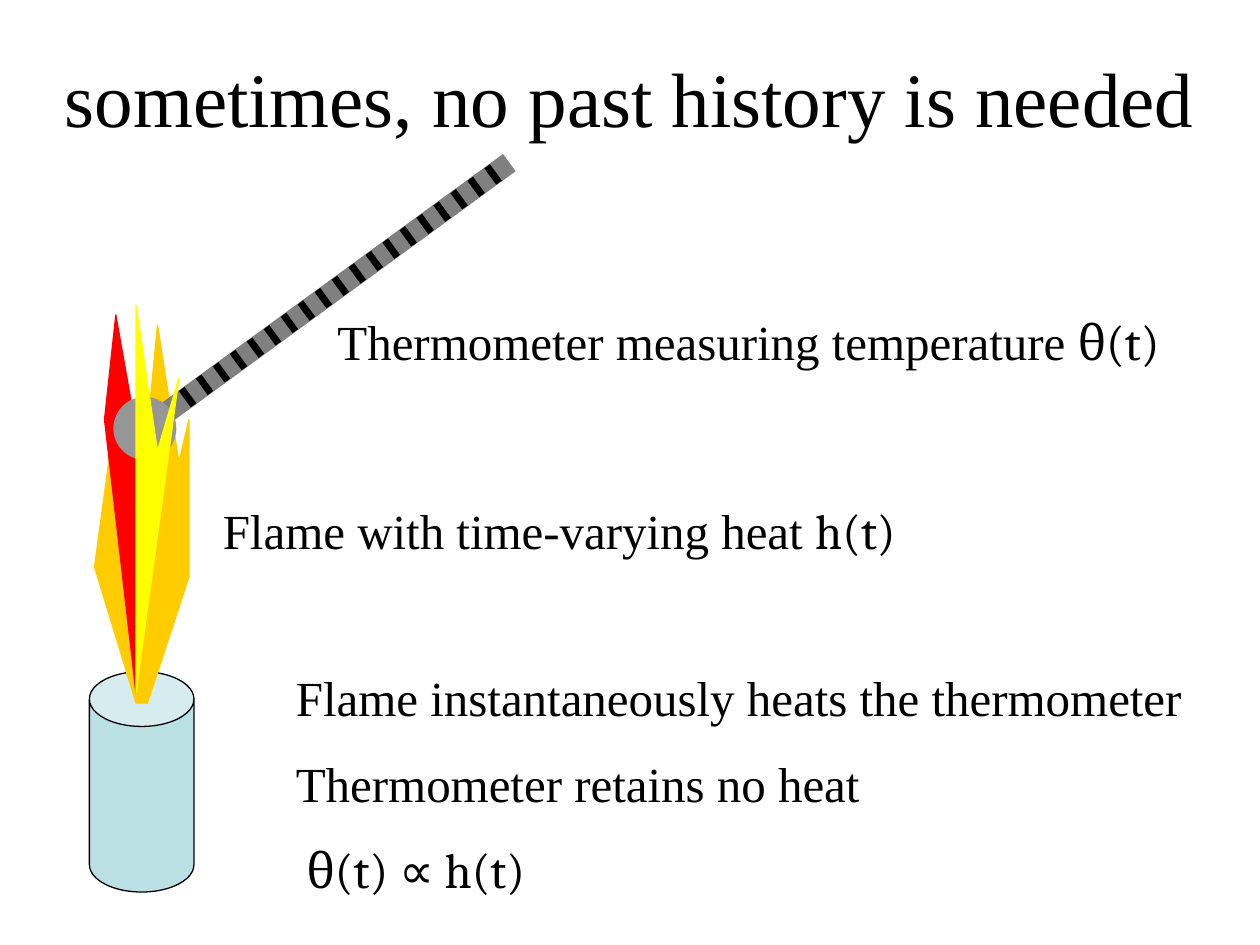
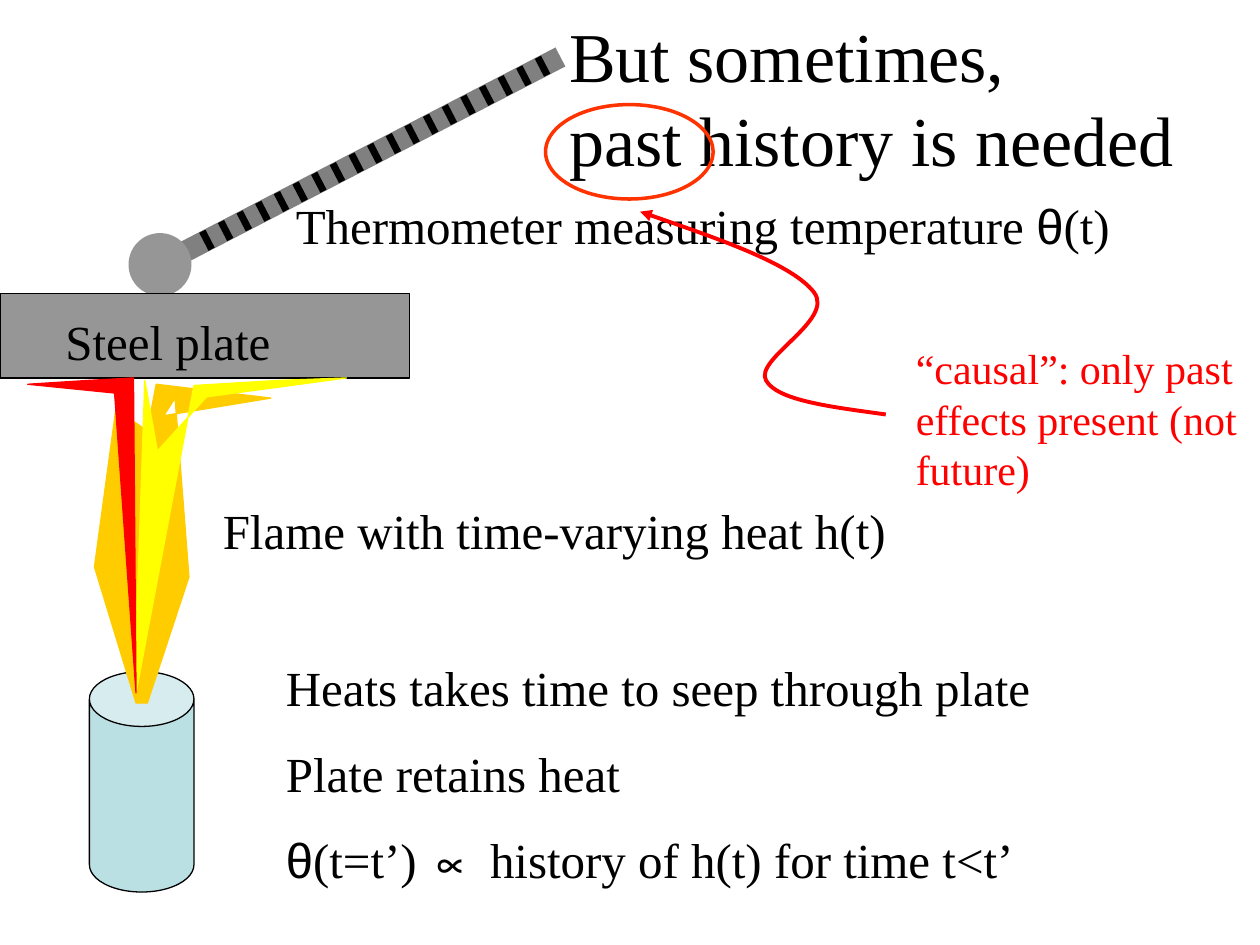
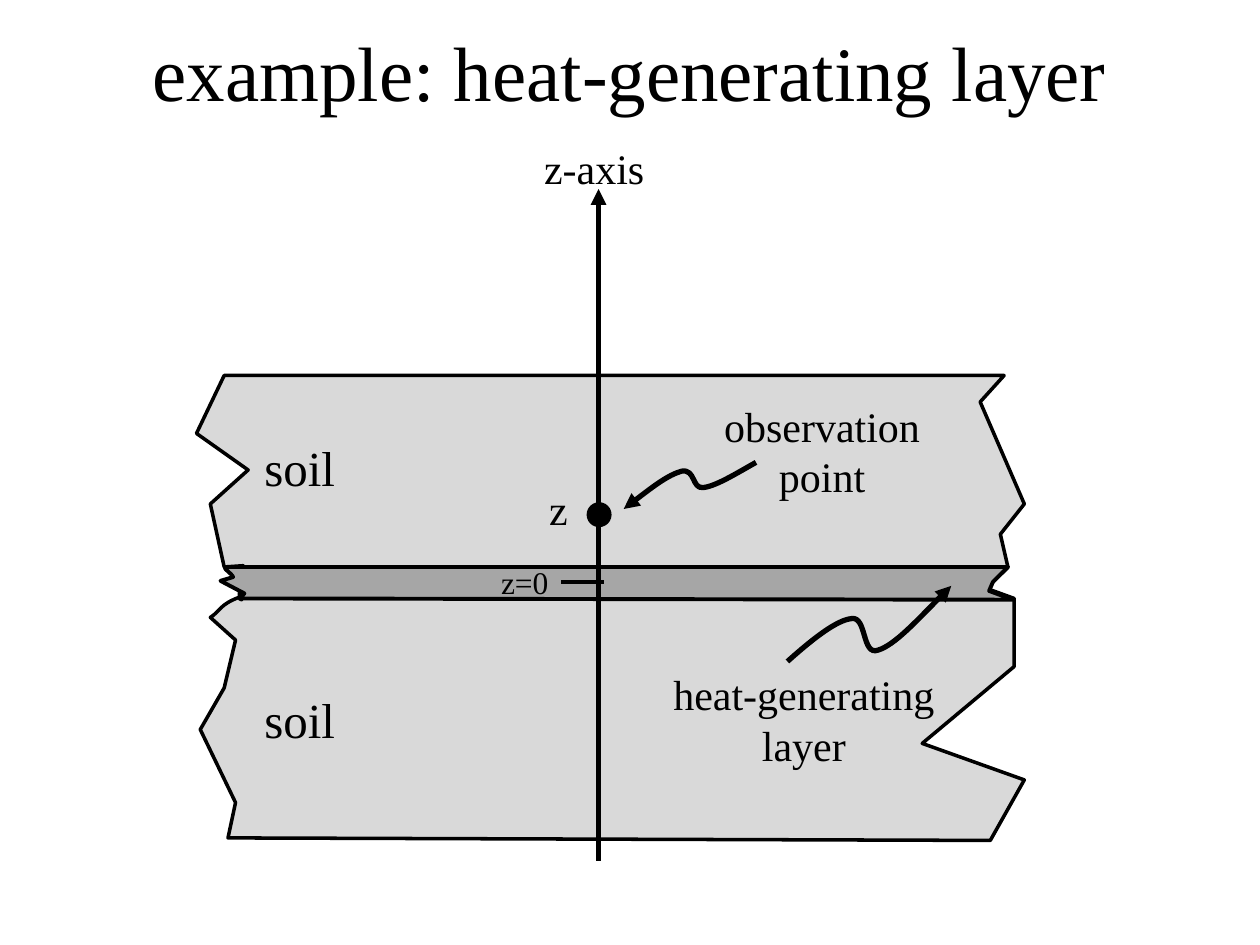
from itertools import islice
from math import cos, radians, sin
from typing import NamedTuple, Optional

from lxml.etree import Element, SubElement
from pptx import Presentation
from pptx.dml.color import RGBColor
from pptx.enum.shapes import MSO_CONNECTOR, MSO_SHAPE
from pptx.enum.text import MSO_ANCHOR, PP_ALIGN
from pptx.oxml.ns import qn
from pptx.util import Inches, Pt

BLACK = RGBColor(0x00, 0x00, 0x00)
RED = RGBColor(0xFF, 0x00, 0x00)
ORANGE = RGBColor(0xFF, 0xCC, 0x00)
YELLOW = RGBColor(0xFF, 0xFF, 0x00)
RING_RED = RGBColor(0xFF, 0x33, 0x00)
ROD_GREY = RGBColor(0x80, 0x80, 0x80)
STEEL = RGBColor(0x96, 0x96, 0x96)
BURNER_BLUE = RGBColor(0xBB, 0xE0, 0xE3)
SOIL_GREY = RGBColor(0xD9, 0xD9, 0xD9)
LAYER_GREY = RGBColor(0xA6, 0xA6, 0xA6)

SERIF = "Times New Roman"
MATH = "Cambria"
GREEK = "Arial"


class Box(NamedTuple):
    left: float
    top: float
    width: float
    height: float


class Span(NamedTuple):
    text: str
    font: str = SERIF


class Label(NamedTuple):
    """A text box; each line is a tuple of spans."""
    box: Box
    lines: tuple
    size: float = 28
    color: RGBColor = BLACK
    align: PP_ALIGN = PP_ALIGN.LEFT
    anchor: MSO_ANCHOR = MSO_ANCHOR.TOP


class Outline(NamedTuple):
    """A start point, then (x, y) for each line and six numbers for each Bézier curve."""
    start: tuple
    segments: tuple
    fill: Optional[RGBColor] = None
    line: RGBColor = BLACK
    line_width: float = 0.75
    arrow: bool = False


class Thermometer(NamedTuple):
    """Lies along a line rising by angle (degrees) from the centre of its bulb."""
    bulb_x: float
    bulb_y: float
    angle: float


def plain(text: str) -> tuple:
    return (Span(text),)


def place(box: Box) -> list:
    return [Inches(length) for length in box]


def paint(shape, fill: Optional[RGBColor], line: Optional[RGBColor], line_width: float = 0.75) -> None:
    shape.shadow.inherit = False
    if fill is None:
        shape.fill.background()
    else:
        shape.fill.solid()
        shape.fill.fore_color.rgb = fill
    if line is None:
        shape.line.fill.background()
    else:
        shape.line.color.rgb = line
        shape.line.width = Pt(line_width)


def add_arrowhead(shape) -> None:
    SubElement(shape.element.spPr.find(qn("a:ln")), qn("a:tailEnd"), type="triangle")


def add_preset(shapes, kind: MSO_SHAPE, box: Box, fill: Optional[RGBColor],
               line: Optional[RGBColor] = None, line_width: float = 0.75):
    shape = shapes.add_shape(kind, *place(box))
    paint(shape, fill, line, line_width)
    return shape


def add_line(shapes, start: tuple, end: tuple, width: float):
    points = [Inches(value) for value in (*start, *end)]
    connector = shapes.add_connector(MSO_CONNECTOR.STRAIGHT, *points)
    connector.line.color.rgb = BLACK
    connector.line.width = Pt(width)
    SubElement(connector.element.spPr, qn("a:effectLst"))
    return connector


def add_outline(shapes, outline: Outline):
    """Draw straight segments, then merge each triple of curve points into one Bézier."""
    builder = shapes.build_freeform(*(Inches(value) for value in outline.start))
    points = [(Inches(segment[i]), Inches(segment[i + 1]))
              for segment in outline.segments for i in range(0, len(segment), 2)]
    builder.add_line_segments(points, close=outline.fill is not None)
    shape = builder.convert_to_shape()
    paint(shape, outline.fill, outline.line, outline.line_width)

    drawing = shape.element.find(".//" + qn("a:path"))
    steps = iter(drawing.findall(qn("a:lnTo")))
    for segment in outline.segments:
        group = list(islice(steps, len(segment) // 2))
        if len(group) == 3:
            curve = Element(qn("a:cubicBezTo"))
            group[0].addprevious(curve)
            for step in group:
                curve.append(step[0])
                drawing.remove(step)
    if outline.arrow:
        add_arrowhead(shape)


def add_label(shapes, label: Label) -> None:
    frame = shapes.add_textbox(*place(label.box)).text_frame
    frame.word_wrap = True
    frame.vertical_anchor = label.anchor
    for number, spans in enumerate(label.lines):
        paragraph = frame.add_paragraph() if number else frame.paragraphs[0]
        paragraph.alignment = label.align
        if number:
            paragraph.space_before = Pt(15.5)
        for span in spans:
            paragraph.text += ""
            break
        for span in spans:
            run = paragraph.add_run()
            run.text = span.text
            run.font.name = span.font
            run.font.size = Pt(label.size)
            run.font.color.rgb = label.color


def add_title(shapes, text: str, box: Box, size: float = 44,
              align: PP_ALIGN = PP_ALIGN.CENTER) -> None:
    """Add a title; a vertical tab in the text breaks the line."""
    frame = shapes.add_textbox(*place(box)).text_frame
    frame.word_wrap = True
    frame.vertical_anchor = MSO_ANCHOR.MIDDLE
    paragraph = frame.paragraphs[0]
    paragraph.text = text
    paragraph.alignment = align
    for run in paragraph.runs:
        run.font.name = SERIF
        run.font.size = Pt(size)
        run.font.color.rgb = BLACK


def add_burner(shapes) -> None:
    burner = add_preset(shapes, MSO_SHAPE.CAN, Box(0.71, 5.33, 0.83, 1.75), BURNER_BLUE, BLACK)
    burner.adjustments[0] = 0.525


def add_thermometer(shapes, thermometer: Thermometer) -> None:
    length, thickness, bulb = 3.58, 0.17, 0.5
    first_mark, mark_count, marks_per_inch, half_mark = 0.42, 19, 6, 0.08
    across, up = cos(radians(thermometer.angle)), sin(radians(thermometer.angle))
    parts = shapes.add_group_shape().shapes

    def along(distance: float) -> tuple:
        return thermometer.bulb_x + distance * across, thermometer.bulb_y - distance * up

    for kind, distance, width, height, color in (
            (MSO_SHAPE.RECTANGLE, length / 2, length, thickness, ROD_GREY),
            (MSO_SHAPE.OVAL, 0, bulb, bulb, STEEL)):
        x, y = along(distance)
        part = add_preset(parts, kind, Box(x - width / 2, y - height / 2, width, height), color)
        part.rotation = -thermometer.angle

    for number in range(mark_count):
        x, y = along(first_mark + number / marks_per_inch)
        dx, dy = half_mark * up, half_mark * across
        add_line(parts, (x - dx, y - dy), (x + dx, y + dy), 4)


def flame(color: RGBColor, start: tuple, *segments: tuple) -> Outline:
    return Outline(start, segments, color, color)


def build_instant_heating(shapes) -> None:
    add_burner(shapes)
    add_title(shapes, "sometimes, no past history is needed", Box(0, 0.25, 10, 1.03))
    add_outline(shapes, flame(ORANGE, (1.08, 5.58), (0.75, 4.5), (0.92, 3.25), (1.17, 3.42),
                              (1.25, 2.58), (1.42, 3.67), (1.5, 3.33), (1.5, 4.58), (1.17, 5.58)))
    add_outline(shapes, flame(RED, (1.17, 3.92), (0.92, 2.5), (0.83, 3.33), (1.08, 5.5),
                              (1.17, 3.83)))
    add_thermometer(shapes, Thermometer(1.15, 3.4, 36.1))
    add_outline(shapes, flame(YELLOW, (1.08, 5.08), (1.08, 2.42), (1.25, 3.58), (1.42, 3),
                              (1.08, 5.5), (1.08, 5)))
    for label in (
            Label(Box(1.67, 3.92, 6.17, 0.57),
                  ((Span("Flame with time-varying heat "), Span("h(t)", MATH)),)),
            Label(Box(2.58, 2.42, 7.42, 0.57),
                  ((Span("Thermometer measuring temperature "), Span("θ(t)", MATH)),)),
            Label(Box(2.25, 5.25, 7.58, 1.97),
                  (plain("Flame instantaneously heats the thermometer"),
                   plain("Thermometer retains no heat"),
                   (Span(" θ(t) ∝ h(t)", MATH),)))):
        add_label(shapes, label)


def build_delayed_heating(shapes) -> None:
    add_burner(shapes)
    add_title(shapes, "But sometimes,\vpast history is needed", Box(4.42, 0.25, 5.33, 1.03),
              40, PP_ALIGN.LEFT)
    add_outline(shapes, flame(ORANGE, (1.08, 5.58), (0.75, 4.5), (0.92, 3.25), (1.17, 3.42),
                              (1.24, 3.05), (2.15, 3.16), (1.3, 3.3), (1.39, 3.16),
                              (1.5, 4.58), (1.17, 5.58)))
    add_thermometer(shapes, Thermometer(1.27, 2.1, 27.4))
    for label in (
            Label(Box(1.67, 3.92, 6.17, 0.57), (plain("Flame with time-varying heat h(t)"),)),
            Label(Box(2.25, 1.5, 7.17, 0.57),
                  ((Span("Thermometer measuring temperature "), Span("θ", GREEK), Span("(t)")),)),
            Label(Box(2.17, 5.17, 7.58, 1.97),
                  (plain("Heats takes time to seep through plate"),
                   plain("Plate retains heat"),
                   (Span("θ", GREEK), Span("(t=t’) ∝ history of h(t) for time t<t’"))))):
        add_label(shapes, label)
    add_preset(shapes, MSO_SHAPE.RECTANGLE, Box(0, 2.33, 3.25, 0.67), STEEL, BLACK)
    add_outline(shapes, flame(YELLOW, (1.08, 5.08), (1.15, 3.02), (1.25, 3.58), (1.64, 3.15),
                              (2.75, 3), (2.21, 3.02), (1.54, 3.06), (1.08, 5.5), (1.08, 5)))
    add_outline(shapes, flame(RED, (0.7, 3.02), (0.22, 3.05), (0.91, 3.12), (1.08, 5.5),
                              (1.06, 3)))
    add_label(shapes, Label(Box(0.42, 2.42, 1.92, 0.57), (plain("Steel plate"),)))
    add_preset(shapes, MSO_SHAPE.OVAL, Box(4.33, 0.83, 1.33, 0.75), None, RING_RED, 2)
    add_outline(shapes, Outline((7.03, 3.29),
                                ((6.6, 3.23, 6.17, 3.18, 6.08, 3.02),
                                 (5.98, 2.85, 6.63, 2.54, 6.46, 2.32),
                                 (6.29, 2.1, 5.69, 1.89, 5.08, 1.68)),
                                line=RED, line_width=2.25, arrow=True))
    add_label(shapes, Label(Box(7.17, 2.67, 2.83, 1.31),
                            (plain("“causal”: only past effects present (not future)"),), 24, RED))


def build_heat_layer(shapes) -> None:
    soil = Outline((1.78, 2.98),
                   ((7.97, 2.98), (7.78, 3.19), (8.13, 4), (7.94, 4.24), (8, 4.5), (7.83, 4.67),
                    (8.05, 4.75), (8.05, 5.29), (7.32, 5.9), (8.13, 6.19), (7.86, 6.67),
                    (1.81, 6.65), (1.87, 6.37), (1.59, 5.79), (1.78, 5.46), (1.87, 5.08),
                    (1.67, 4.9), (1.75, 4.85, 1.74, 4.8, 1.9, 4.74),
                    (1.9, 4.65, 1.93, 4.59, 1.93, 4.49), (1.78, 4.5), (1.67, 4),
                    (1.97, 3.73), (1.56, 3.44)),
                   SOIL_GREY, line_width=2)
    heat_layer = Outline((1.8, 4.5),
                         ((8, 4.5), (7.88, 4.62), (7.85, 4.69), (8.04, 4.76), (1.9, 4.75),
                          (1.95, 4.78, 1.9, 4.72, 1.94, 4.71), (1.75, 4.61), (1.85, 4.58),
                          (1.84, 4.55, 1.75, 4.5, 1.8, 4.5)),
                         LAYER_GREY, line_width=2.25)
    layer_arrow = Outline((6.25, 5.25),
                          ((6.44, 5.08, 6.64, 4.92, 6.76, 4.91),
                           (6.88, 4.89, 6.84, 5.21, 6.97, 5.16),
                           (7.1, 5.12, 7.32, 4.88, 7.55, 4.65)),
                          line_width=3, arrow=True)
    point_arrow = Outline((6, 3.67),
                          ((5.84, 3.76, 5.68, 3.86, 5.58, 3.87),
                           (5.49, 3.88, 5.52, 3.72, 5.41, 3.74),
                           (5.3, 3.77, 5.12, 3.91, 4.95, 4.04)),
                          line_width=3, arrow=True)

    add_outline(shapes, soil)
    add_title(shapes, "example: heat-generating layer", Box(0, 0.08, 10, 0.96))
    add_outline(shapes, heat_layer)
    for top in (3.42, 5.42):
        add_label(shapes, Label(Box(2, top, 3.08, 0.57), (plain("soil"),)))
    add_outline(shapes, layer_arrow)
    add_preset(shapes, MSO_SHAPE.OVAL, Box(4.67, 4, 0.17, 0.17), BLACK, BLACK, 2)
    add_outline(shapes, point_arrow)
    add_arrowhead(add_line(shapes, (4.75, 6.83), (4.75, 1.5), 3))
    add_line(shapes, (4.79, 4.62), (4.45, 4.62), 2.25)
    for text, box, size, align in (
            ("heat-generating layer", Box(5.17, 5.26, 2.42, 0.91), 24, PP_ALIGN.CENTER),
            ("observation point", Box(5.61, 3.13, 1.83, 0.91), 24, PP_ALIGN.CENTER),
            ("z=0", Box(3.25, 4.42, 1.83, 0.4), 18, PP_ALIGN.CENTER),
            ("z-axis", Box(4.22, 1.08, 1.83, 0.5), 24, PP_ALIGN.LEFT),
            ("z", Box(4.26, 3.79, 1.83, 0.5), 24, PP_ALIGN.LEFT)):
        add_label(shapes, Label(box, (plain(text),), size, align=align))


def main() -> None:
    deck = Presentation()
    deck.slide_width, deck.slide_height = Inches(10), Inches(7.5)
    blank = deck.slide_layouts[6]
    for build in (build_instant_heating, build_delayed_heating, build_heat_layer):
        build(deck.slides.add_slide(blank).shapes)
    deck.save("out.pptx")


if __name__ == "__main__":
    main()
